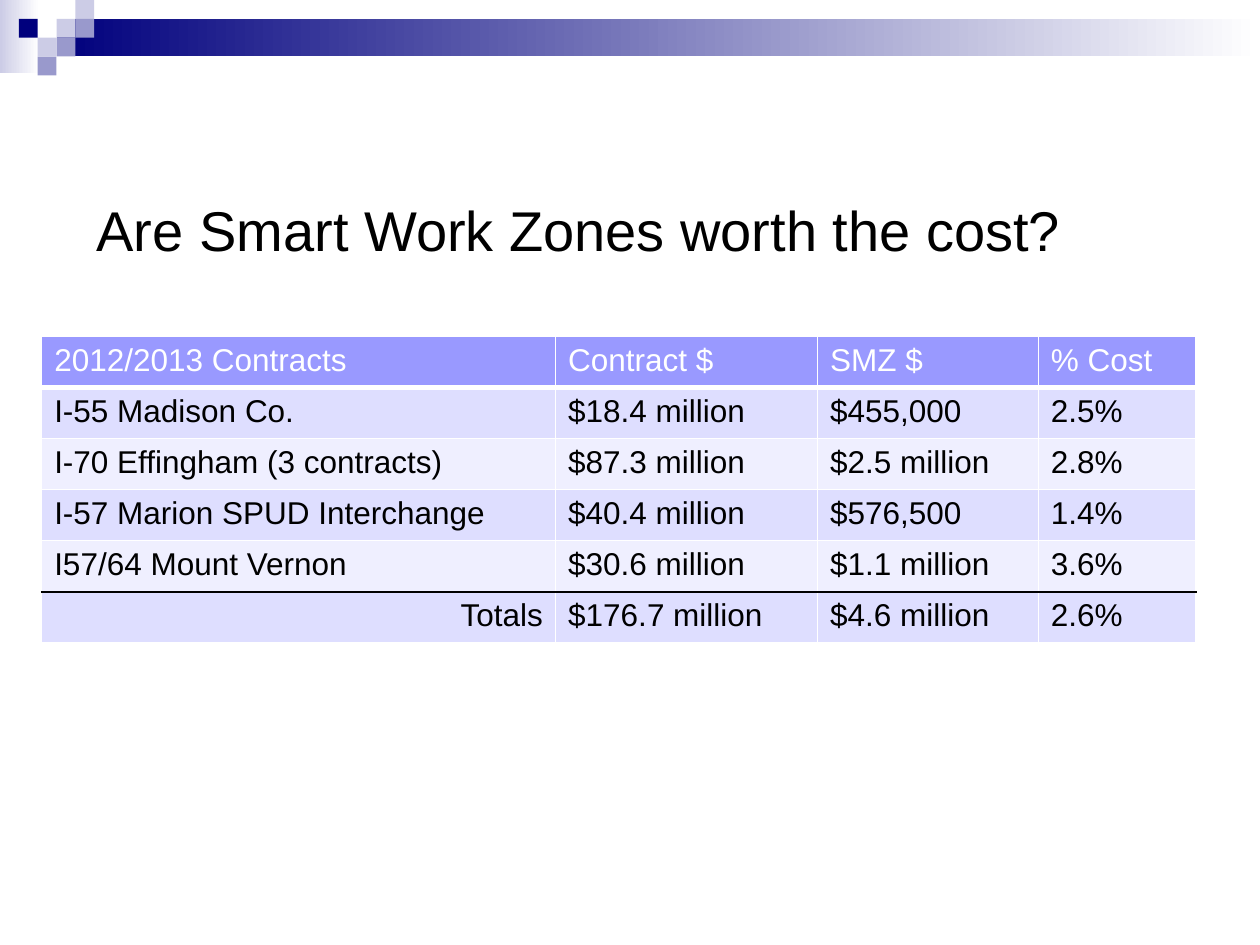
from dataclasses import dataclass

from lxml import etree
from pptx import Presentation
from pptx import util as u
from pptx.dml.color import RGBColor
from pptx.enum import shapes, text
from pptx.oxml.ns import qn


@dataclass(frozen=True)
class Theme:
    font: str = "Arial"
    title_size: int = 32
    table_size: int = 18
    black: str = "000000"
    white: str = "FFFFFF"
    navy: str = "00007D"
    pale: str = "CCCCE6"
    mid: str = "9999CC"
    header: str = "9999FF"
    bands: tuple = ("DEDEFF", "EFEFFF")


THEME = Theme()
SQUARE = 0.38  # side and pitch of the corner squares, in cm

# Column, row and colour of each corner square
SQUARES = [
    (3, 1, THEME.pale),
    (4, 0, THEME.pale),
    (4, 1, THEME.mid),
    (2, 2, THEME.pale),
    (1, 1, THEME.navy),
    (3, 2, THEME.mid),
    (2, 3, THEME.mid),
]

COLUMN_WIDTHS = (10.36, 5.28, 4.45, 3.18)
ROW_HEIGHT = 1.03
CONTRACTS = [
    ("2012/2013 Contracts", "Contract $", "SMZ $", "% Cost"),
    ("I-55 Madison Co.", "$18.4 million", "$455,000", "2.5%"),
    ("I-70 Effingham (3 contracts)", "$87.3 million", "$2.5 million", "2.8%"),
    ("I-57 Marion SPUD Interchange", "$40.4 million", "$576,500", "1.4%"),
    ("I57/64 Mount Vernon", "$30.6 million", "$1.1 million", "3.6%"),
    ("Totals", "$176.7 million", "$4.6 million", "2.6%"),
]


def style_font(paragraph, size, color):
    paragraph.font.name = THEME.font
    paragraph.font.size = u.Pt(size)
    paragraph.font.color.rgb = RGBColor.from_string(color)


def add_block(slide, left, top, width, height, color, fade_to=None):
    """Add a borderless rectangle, plain or fading from left to right."""
    shape = slide.shapes.add_shape(
        shapes.MSO_SHAPE.RECTANGLE, u.Cm(left), u.Cm(top), u.Cm(width), u.Cm(height)
    )
    shape.shadow.inherit = False
    shape.line.fill.background()
    if fade_to:
        shape.fill.gradient()
        shape.fill.gradient_angle = 0
        for stop, position, tint in zip(
            shape.fill.gradient_stops, (0, 1), (color, fade_to)
        ):
            stop.position = position
            stop.color.rgb = RGBColor.from_string(tint)
    else:
        shape.fill.solid()
        shape.fill.fore_color.rgb = RGBColor.from_string(color)


def add_title(slide, wording):
    box = slide.shapes.add_textbox(u.Cm(1.7), u.Cm(3.81), u.Cm(22.23), u.Cm(1.63))
    frame = box.text_frame
    frame.word_wrap = True
    frame.vertical_anchor = text.MSO_ANCHOR.MIDDLE
    paragraph = frame.paragraphs[0]
    paragraph.text = wording
    style_font(paragraph, THEME.title_size, THEME.black)


def set_border(cell, side, color, points):
    properties = cell._tc.get_or_add_tcPr()
    line = etree.SubElement(properties, qn(f"a:ln{side}"), w=str(u.Pt(points)))
    fill = etree.SubElement(line, qn("a:solidFill"))
    etree.SubElement(fill, qn("a:srgbClr"), val=color)


def cell_borders(row, last):
    """White grid, heavier below the header, black above the totals."""
    top = (THEME.white, 3 if row == 1 else 1)
    bottom = (THEME.white, 3 if row == 0 else 1)
    if row == last:
        top = (THEME.black, 1)
    if row == last - 1:
        bottom = (THEME.black, 1)
    side = (THEME.white, 1)
    return {"L": side, "R": side, "T": top, "B": bottom}


def add_contract_table(slide, rows):
    table = slide.shapes.add_table(
        len(rows), len(COLUMN_WIDTHS), u.Cm(0.84), u.Cm(6.78),
        u.Cm(sum(COLUMN_WIDTHS)), u.Cm(ROW_HEIGHT * len(rows)),
    ).table
    for column, width in zip(table.columns, COLUMN_WIDTHS):
        column.width = u.Cm(width)

    last = len(rows) - 1
    for r, values in enumerate(rows):
        table.rows[r].height = u.Cm(ROW_HEIGHT)
        fill = THEME.bands[(r - 1) % 2] if r else THEME.header
        for c, value in enumerate(values):
            cell = table.cell(r, c)
            for side, (color, points) in cell_borders(r, last).items():
                set_border(cell, side, color, points)
            cell.fill.solid()
            cell.fill.fore_color.rgb = RGBColor.from_string(fill)
            cell.text = value
            paragraph = cell.text_frame.paragraphs[0]
            style_font(paragraph, THEME.table_size, THEME.black if r else THEME.white)
    table.cell(last, 0).text_frame.paragraphs[0].alignment = text.PP_ALIGN.RIGHT


def main():
    presentation = Presentation()
    presentation.slide_width = u.Cm(25.4)
    presentation.slide_height = u.Cm(19.05)
    slide = presentation.slides.add_slide(presentation.slide_layouts[6])

    # Header band and corner squares
    add_block(slide, 0, 0, 0.79, 1.47, THEME.pale, THEME.white)
    add_block(slide, 1.14, SQUARE, 24.26, 2 * SQUARE, THEME.navy, THEME.white)
    for column, row, color in SQUARES:
        add_block(slide, column * SQUARE, row * SQUARE, SQUARE, SQUARE, color)

    # Content
    add_title(slide, "Are Smart Work Zones worth the cost?")
    add_contract_table(slide, CONTRACTS)

    presentation.save("out.pptx")


if __name__ == "__main__":
    main()
